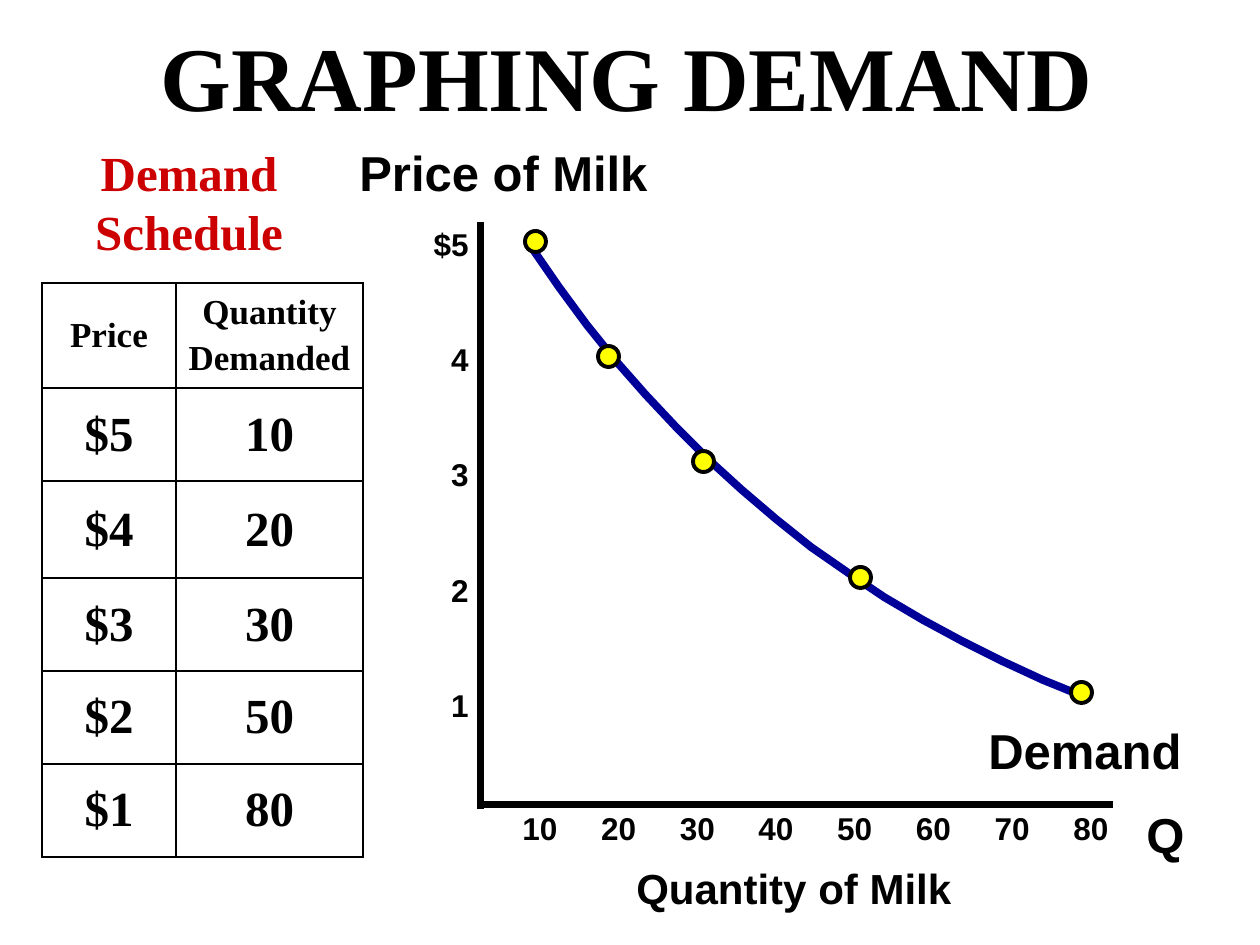
import pptx
import pptx.util
import pptx.dml.color
import pptx.enum.shapes
import pptx.enum.text
import pptx.oxml
import pptx.oxml.ns

SCALE = 914400 / 126  # EMU in one px
HUES = {"ink": "000000", "red": "CC0000", "blue": "000099",
        "dot": "FFFF00"}
ALIGN = pptx.enum.text.PP_ALIGN
ANCHOR = pptx.enum.text.MSO_ANCHOR
SERIF, SANS = "Times New Roman", "Arial"


def emu(px):
    return pptx.util.Emu(round(px * SCALE))


def hue(name):
    return pptx.dml.color.RGBColor.from_string(HUES[name])


def node(tag, attrs="", inner=""):
    space = pptx.oxml.ns.nsdecls("a")
    return pptx.oxml.parse_xml(f"<a:{tag} {space} {attrs}>{inner}</a:{tag}>")


class Board:
    def __init__(self, slide):
        self.slide = slide
        self.shapes = slide.shapes

    def place(self, shape, box):
        for key, px in zip(("left", "top", "width", "height"), box):
            setattr(shape, key, emu(px))

    def fill_text(self, frame, lines, size, face, tint="ink",
                  align=ALIGN.LEFT, gap=0):
        frame.text = "\n".join(lines)
        form = {"size": pptx.util.Pt(size), "name": face, "bold": True}
        for i, para in enumerate(frame.paragraphs):
            para.alignment = align
            para.space_before = pptx.util.Pt(gap if i else 0)
            for run in para.runs:
                for key, val in form.items():
                    setattr(run.font, key, val)
                run.font.color.rgb = hue(tint)

    def title(self, box, text, size):
        shape = self.shapes.title
        self.place(shape, box)
        frame = shape.text_frame
        frame.auto_size = pptx.enum.text.MSO_AUTO_SIZE.NONE
        frame.vertical_anchor = ANCHOR.MIDDLE
        self.fill_text(frame, [text], size, SERIF, align=ALIGN.CENTER)

    def label(self, box, lines, size, face=SANS, anchor=ANCHOR.TOP, **form):
        shape = self.shapes.add_textbox(*map(emu, box))
        frame = shape.text_frame
        frame.word_wrap = True
        frame.vertical_anchor = anchor
        self.fill_text(frame, lines, size, face, **form)
        return frame

    def ticks(self, box, marks, size, step):
        frame = self.label(box, ["\t".join(marks)], size)
        stops = "".join(f'<a:tab pos="{emu(step * i)}" algn="l"/>'
                        for i in range(1, len(marks)))
        props = frame.paragraphs[0]._p.get_or_add_pPr()
        props.append(node("tabLst", inner=stops))

    def stroke(self, line, tint, width):
        line.color.rgb = hue(tint)
        line.width = pptx.util.Pt(width)

    def axes(self, ends, width):
        group = self.shapes.add_group_shape()
        kind = pptx.enum.shapes.MSO_CONNECTOR.STRAIGHT
        for end in ends:
            line = group.shapes.add_connector(kind, *map(emu, end))
            self.stroke(line.line, "ink", width)
            line._element.spPr.append(node("effectLst"))

    def curve(self, points, tint, width):
        pen = self.shapes.build_freeform(*points[0], scale=SCALE)
        pen.add_line_segments(points[1:], close=False)
        shape = pen.convert_to_shape()
        shape.shadow.inherit = False
        shape.fill.background()
        self.stroke(shape.line, tint, width)

    def dot(self, left, top, size):
        kind = pptx.enum.shapes.MSO_SHAPE.OVAL
        shape = self.shapes.add_shape(kind, *map(emu, (left, top, size, size)))
        shape.shadow.inherit = False
        shape.fill.solid()
        shape.fill.fore_color.rgb = hue("dot")
        self.stroke(shape.line, "ink", 2.25)

    def table(self, left, top, cols, rows, data):
        box = (left, top, sum(cols), sum(rows))
        grid = self.shapes.add_table(len(rows), len(cols),
                                     *map(emu, box)).table
        grid.first_row = grid.horz_banding = False
        for col, px in zip(grid.columns, cols):
            col.width = emu(px)
        for r, (row, px) in enumerate(zip(grid.rows, rows)):
            row.height = emu(px)
            for cell, text in zip(row.cells, data[r]):
                self.cell(cell, text, 28 if r else 20)

    def cell(self, cell, text, size):
        form = {"margin_left": 0, "margin_right": 0, "margin_top": 0,
                "margin_bottom": 0, "vertical_anchor": ANCHOR.MIDDLE}
        for key, val in form.items():
            setattr(cell, key, val)
        self.fill_text(cell.text_frame, text.split("\n"), size, SERIF,
                       align=ALIGN.CENTER, gap=4)
        cell.fill.background()
        props = cell._tc.get_or_add_tcPr()
        paint = f'<a:solidFill><a:srgbClr val="{HUES["ink"]}"/></a:solidFill>'
        for i, side in enumerate("LRTB"):
            props.insert(i, node(f"ln{side}", 'w="12700"', paint))


def bend(start, pull, end, count):
    """Points along a quadratic curve."""
    steps = [i / count for i in range(count + 1)]
    return [tuple(round((1 - t) ** 2 * a + 2 * t * (1 - t) * b + t * t * c)
                  for a, b, c in zip(start, pull, end)) for t in steps]


def main():
    deck = pptx.Presentation()
    deck.slide_width, deck.slide_height = emu(1260), emu(945)
    board = Board(deck.slides.add_slide(deck.slide_layouts[5]))
    board.title((32, 16, 1189, 118), "GRAPHING DEMAND", 52)

    # Axes and their labels
    board.axes([(481, 222, 481, 809), (478, 805, 1113, 805)], 4)
    board.label((1134, 798, 63, 72), ["Q"], 28)
    board.label((411, 219, 70, 505), ["$5", "4", "3", "2", "1"], 18,
                align=ALIGN.RIGHT, gap=44.2)
    board.label((347, 136, 318, 72), ["Price of Milk"], 28,
                anchor=ANCHOR.MIDDLE)
    board.label((624, 856, 343, 64), ["Quantity of Milk"], 24,
                anchor=ANCHOR.MIDDLE)
    board.ticks((510, 803, 624, 50), [str(n) for n in range(10, 90, 10)],
                18, 78.7)

    # Demand schedule
    board.label((42, 136, 294, 130), ["Demand Schedule"], 28, SERIF,
                tint="red", align=ALIGN.CENTER)
    board.table(42, 283, [134, 187], [105, 93, 97, 93, 93, 93],
                [("Price", "Quantity\nDemanded"), ("$5", "10"), ("$4", "20"),
                 ("$3", "30"), ("$2", "50"), ("$1", "80")])

    # Demand curve with its points
    board.curve(bend((532, 248), (744, 566), (1085, 697), 16), "blue", 4.5)
    for left, top in [(525, 231), (598, 346), (693, 451), (850, 567),
                      (1071, 682)]:
        board.dot(left, top, 21)
    board.label((976, 714, 221, 72), ["Demand"], 28)

    deck.save("out.pptx")


if __name__ == "__main__":
    main()
